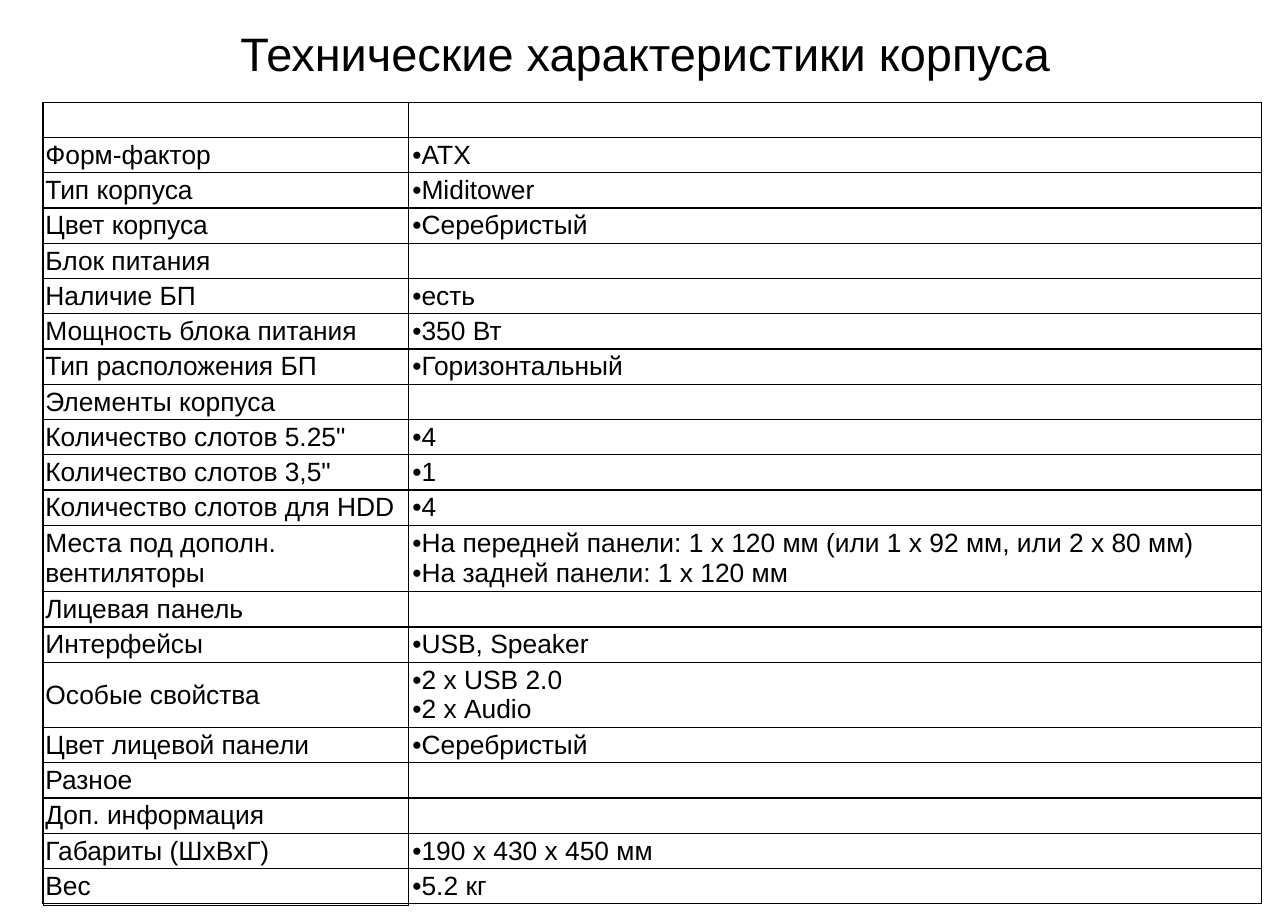
from lxml.etree import SubElement
from pptx import Presentation
from pptx.dml.color import RGBColor
from pptx.enum.text import MSO_ANCHOR, PP_ALIGN
from pptx.oxml.ns import qn
from pptx.util import Inches, Pt

BLACK = "000000"
FONT = "Arial"
LABEL_WIDTH, VALUE_WIDTH = 3.47, 8.09
TABLE_TOP, TABLE_HEIGHT = 0.97, 7.6

# Label and values; a label without values spans both columns.
SPECIFICATIONS = [
    ("Форм-фактор", ["ATX"]),
    ("Тип корпуса", ["Miditower"]),
    ("Цвет корпуса", ["Серебристый"]),
    ("Блок питания", []),
    ("Наличие БП", ["есть"]),
    ("Мощность блока питания", ["350 Вт"]),
    ("Тип расположения БП", ["Горизонтальный"]),
    ("Элементы корпуса", []),
    ('Количество слотов 5.25"', ["4"]),
    ('Количество слотов 3,5"', ["1"]),
    ("Количество слотов для HDD", ["4"]),
    ("Места под дополн. вентиляторы", [
        "На передней панели: 1 x 120 мм (или 1 x 92 мм, или 2 x 80 мм)",
        "На задней панели: 1 x 120 мм",
    ]),
    ("Лицевая панель", []),
    ("Интерфейсы", ["USB, Speaker"]),
    ("Особые свойства", ["2 x USB 2.0", "2 х Audio"]),
    ("Цвет лицевой панели", ["Серебристый"]),
    ("Разное", []),
    ("Доп. информация", []),
    ("Габариты (ШхВхГ)", ["190 х 430 х 450 мм"]),
    ("Вес", ["5.2 кг"]),
]
TALL_ROWS = {12: 0.63, 15: 0.62}


def format_paragraph(paragraph, size, bullet=False):
    if bullet:
        properties = paragraph._p.get_or_add_pPr()
        properties.set("marL", "0")
        properties.set("indent", "0")
        SubElement(properties, qn("a:buFont")).set("typeface", FONT)
        SubElement(properties, qn("a:buChar")).set("char", "•")
    paragraph.font.name = FONT
    paragraph.font.size = Pt(size)
    paragraph.font.color.rgb = RGBColor.from_string(BLACK)


def add_outlined_table(left, height, row_count, widths):
    """Add an unfilled table with thin black lines around every cell."""
    table = slide.shapes.add_table(
        row_count, len(widths), Inches(left), Inches(TABLE_TOP),
        Inches(sum(widths)), Inches(height)).table
    table.first_row = table.horz_banding = False
    for column, width in zip(table.columns, widths):
        column.width = Inches(width)
    for cell in table.iter_cells():
        properties = cell._tc.get_or_add_tcPr()
        for side in ("a:lnL", "a:lnR", "a:lnT", "a:lnB"):
            line = SubElement(properties, qn(side), w=str(Pt(1)))
            fill = SubElement(line, qn("a:solidFill"))
            SubElement(fill, qn("a:srgbClr"), val=BLACK)
        cell.fill.background()
        cell.vertical_anchor = MSO_ANCHOR.MIDDLE
        cell.margin_left = cell.margin_right = Inches(0.03)
        cell.margin_top = cell.margin_bottom = Inches(0.01)
    return table


presentation = Presentation()
presentation.slide_width = Inches(12.21)
presentation.slide_height = Inches(8.66)
slide = presentation.slides.add_slide(presentation.slide_layouts[5])

title = slide.shapes.title
title.left, title.top = Inches(0.63), Inches(0.19)
title.width, title.height = Inches(10.98), Inches(0.62)
title.text = "Технические характеристики корпуса"
frame = title.text_frame
frame.vertical_anchor = MSO_ANCHOR.MIDDLE
frame.margin_left = frame.margin_right = Inches(0.12)
frame.margin_top = frame.margin_bottom = Inches(0.06)
frame.paragraphs[0].alignment = PP_ALIGN.CENTER
format_paragraph(frame.paragraphs[0], 32)

row_count = len(SPECIFICATIONS) + 1
table = add_outlined_table(0.4, TABLE_HEIGHT, row_count, [LABEL_WIDTH, VALUE_WIDTH])
row_height = (TABLE_HEIGHT - sum(TALL_ROWS.values())) / (row_count - len(TALL_ROWS))
for index, row in enumerate(table.rows):
    row.height = Inches(TALL_ROWS.get(index, row_height))

for index, (label, values) in enumerate(SPECIFICATIONS, start=1):
    label_cell, value_cell = table.cell(index, 0), table.cell(index, 1)
    label_cell.text = label
    format_paragraph(label_cell.text_frame.paragraphs[0], 18)
    if not values:
        label_cell.merge(value_cell)
        continue
    value_cell.margin_left = value_cell.margin_right = Inches(0.04)
    value_cell.text = "\n".join(values)
    for paragraph in value_cell.text_frame.paragraphs:
        format_paragraph(paragraph, 18, bullet=True)

# The frame around the label column continues its edge through the merged rows.
add_outlined_table(0.41, 7.61, 1, [3.46])

presentation.save("out.pptx")
